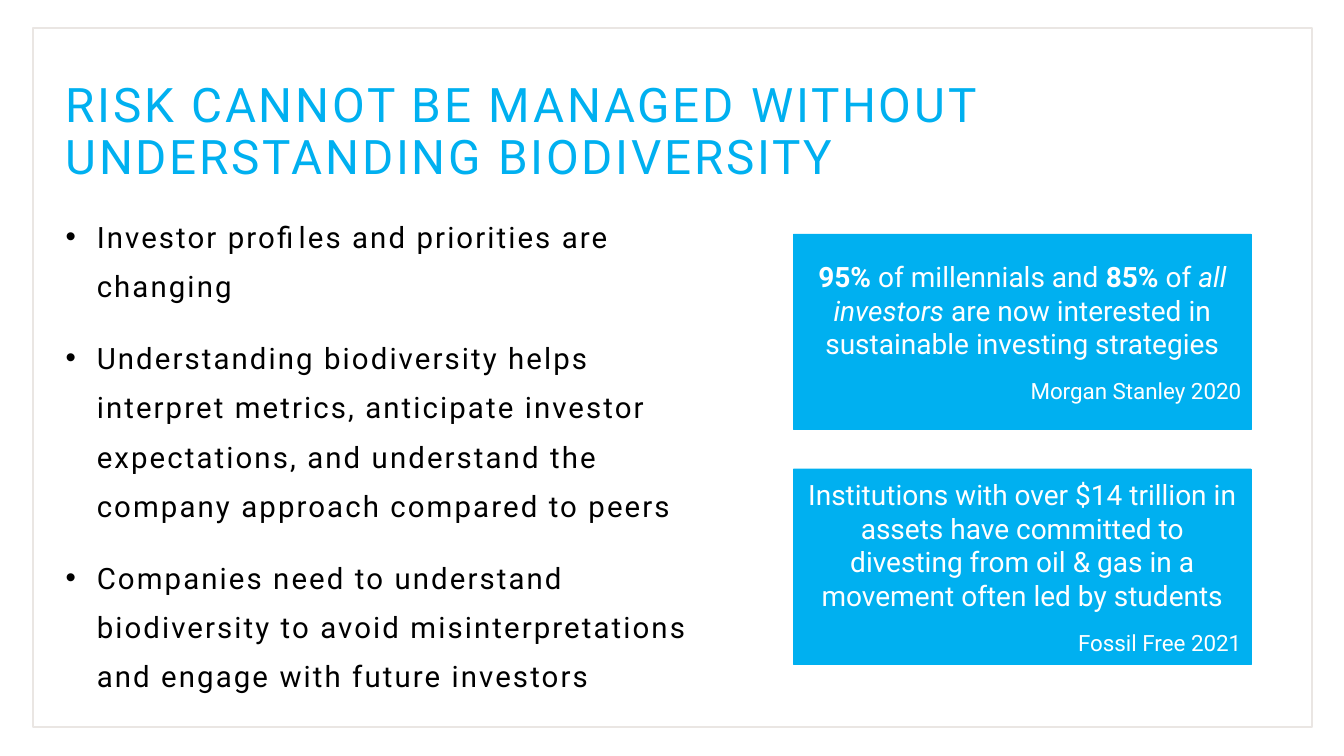
from dataclasses import dataclass

from lxml.etree import SubElement
from pptx import Presentation
from pptx.dml.color import RGBColor
from pptx.enum.shapes import MSO_SHAPE
from pptx.enum.text import MSO_ANCHOR, MSO_AUTO_SIZE, PP_ALIGN
from pptx.oxml.ns import qn
from pptx.util import Inches, Pt


@dataclass(frozen=True)
class Theme:
    font: str = "Roboto"
    accent: RGBColor = RGBColor(0x00, 0xB0, 0xF0)
    text: RGBColor = RGBColor(0x00, 0x00, 0x00)
    inverse: RGBColor = RGBColor(0xFF, 0xFF, 0xFF)
    frame: RGBColor = RGBColor(0xEA, 0xE6, 0xE3)
    title_size: float = 34
    body_size: float = 21
    callout_size: float = 20
    credit_size: float = 16


THEME = Theme()

TITLE = "RISK CANNOT BE MANAGED WITHOUT UNDERSTANDING BIODIVERSITY"
POINTS = [
    "Investor profiles and priorities are changing",
    "Understanding biodiversity helps interpret metrics, anticipate investor "
    "expectations, and understand the company approach compared to peers",
    "Companies need to understand biodiversity to avoid misinterpretations "
    "and engage with future investors",
]
# Each callout: its (text, style) pieces, then its credit.
CALLOUTS = [
    ([("95%", "bold"), (" of millennials and ", ""), ("85%", "bold"), (" of ", ""),
      ("all investors", "italic"),
      (" are now interested in sustainable investing strategies", "")],
     "Morgan Stanley 2020"),
    ([("Institutions with over $14 trillion in assets have committed to "
       "divesting from oil & gas in a movement often led by students", "")],
     "Fossil Free 2021"),
]
CALLOUT_TOP, CALLOUT_STEP = 2.32, 2.33


def place(shape, left, top, width, height):
    shape.left, shape.top = Inches(left), Inches(top)
    shape.width, shape.height = Inches(width), Inches(height)


def add_text(paragraph, text, *, size, color, bold=False, italic=False, tracking=0):
    """Append a formatted run; tracking is letter spacing in points."""
    run = paragraph.add_run()
    run.text = text
    font = run.font
    font.name, font.size = THEME.font, Pt(size)
    font.bold, font.italic = bold, italic
    font.color.rgb = color
    if tracking:
        run._r.get_or_add_rPr().set("spc", str(int(tracking * 100)))


def add_bullet(paragraph, indent):
    properties = paragraph._p.get_or_add_pPr()
    properties.set("marL", str(Inches(indent)))
    properties.set("indent", str(-Inches(indent)))
    SubElement(properties, qn("a:buFont")).set("typeface", "Arial")
    SubElement(properties, qn("a:buChar")).set("char", "•")


def prepare_frame(shape, anchor):
    frame = shape.text_frame
    frame.word_wrap = True
    frame.auto_size = MSO_AUTO_SIZE.NONE
    frame.vertical_anchor = anchor
    return frame


def next_paragraph(frame, index):
    return frame.add_paragraph() if index else frame.paragraphs[0]


def fill_title(shape):
    place(shape, 0.55, 0.76, 12.2, 0.57)
    paragraph = prepare_frame(shape, MSO_ANCHOR.TOP).paragraphs[0]
    paragraph.alignment = PP_ALIGN.LEFT
    paragraph.line_spacing = 0.9
    add_text(paragraph, TITLE, size=THEME.title_size, color=THEME.accent, tracking=2)


def fill_points(shape):
    place(shape, 0.55, 1.98, 6.55, 4.43)
    frame = prepare_frame(shape, MSO_ANCHOR.TOP)
    for index, point in enumerate(POINTS):
        paragraph = next_paragraph(frame, index)
        add_bullet(paragraph, 0.31)
        paragraph.line_spacing = 1.4
        paragraph.space_before = Pt(10 if index else 0)
        paragraph.space_after = Pt(6)
        add_text(paragraph, point, size=THEME.body_size, color=THEME.text, tracking=1.5)


def add_rectangle(slide, left, top, width, height, *, line, line_width, fill=None):
    shape = slide.shapes.add_shape(MSO_SHAPE.RECTANGLE, Inches(left), Inches(top),
                                   Inches(width), Inches(height))
    shape.shadow.inherit = False
    if fill is None:
        shape.fill.background()
    else:
        shape.fill.solid()
        shape.fill.fore_color.rgb = fill
    shape.line.color.rgb = line
    shape.line.width = Pt(line_width)
    return shape


def add_callout(slide, top, pieces, credit):
    shape = add_rectangle(slide, 7.87, top, 4.54, 1.94, fill=THEME.accent,
                          line=THEME.accent, line_width=0.25)
    frame = prepare_frame(shape, MSO_ANCHOR.MIDDLE)
    statement = next_paragraph(frame, 0)
    statement.alignment = PP_ALIGN.CENTER
    for text, style in pieces:
        add_text(statement, text, size=THEME.callout_size, color=THEME.inverse,
                 bold=style == "bold", italic=style == "italic")
    source = next_paragraph(frame, 1)
    source.alignment = PP_ALIGN.RIGHT
    source.space_before = Pt(12)
    add_text(source, credit, size=THEME.credit_size, color=THEME.inverse)


def main():
    presentation = Presentation()
    presentation.slide_width, presentation.slide_height = Inches(13.33), Inches(7.5)
    slide = presentation.slides.add_slide(presentation.slide_layouts[1])
    fill_title(slide.shapes.title)
    fill_points(slide.placeholders[1])
    add_rectangle(slide, 0.33, 0.28, 12.68, 6.93, line=THEME.frame, line_width=1.5)
    for index, (pieces, credit) in enumerate(CALLOUTS):
        add_callout(slide, CALLOUT_TOP + index * CALLOUT_STEP, pieces, credit)
    presentation.save("out.pptx")


if __name__ == "__main__":
    main()
